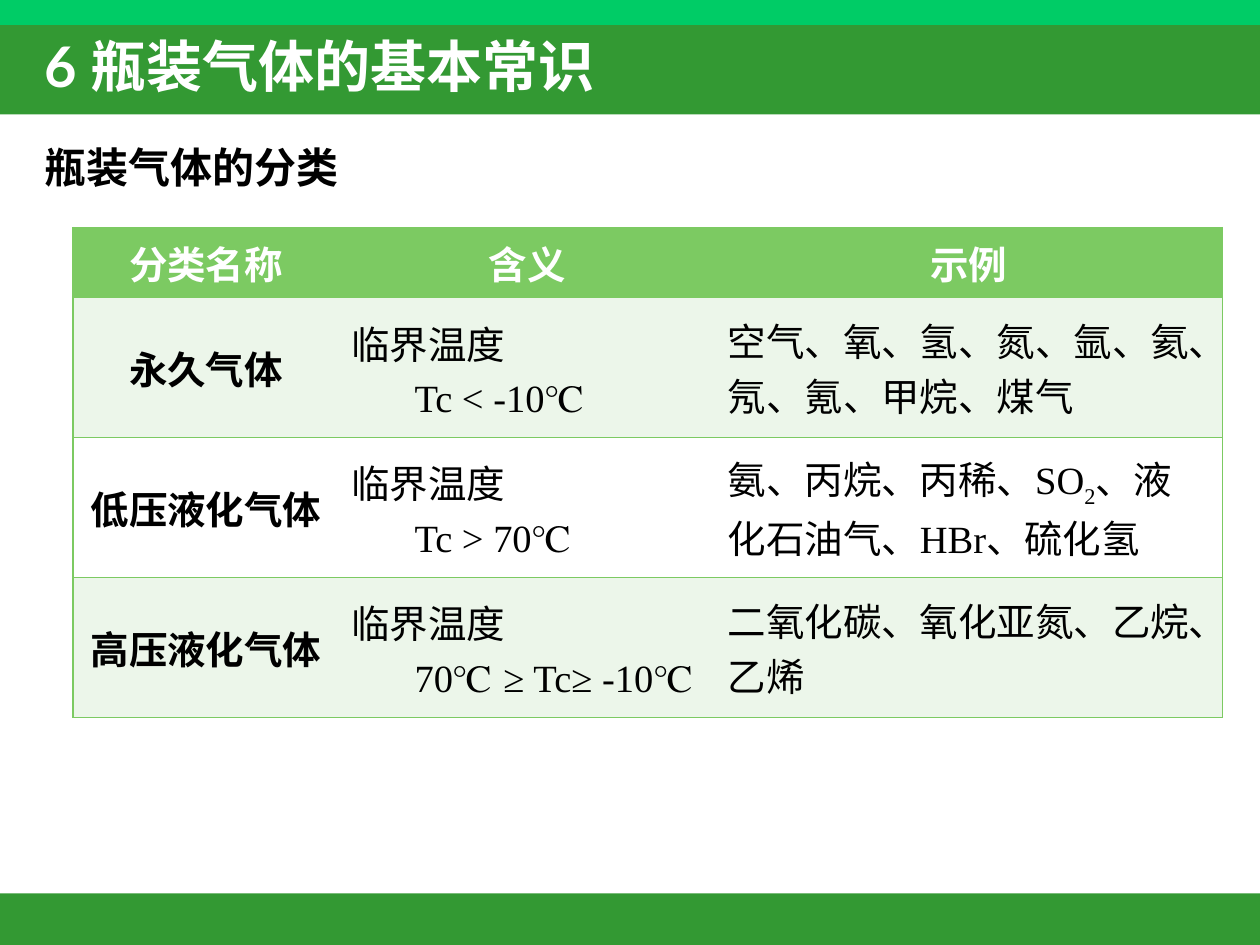
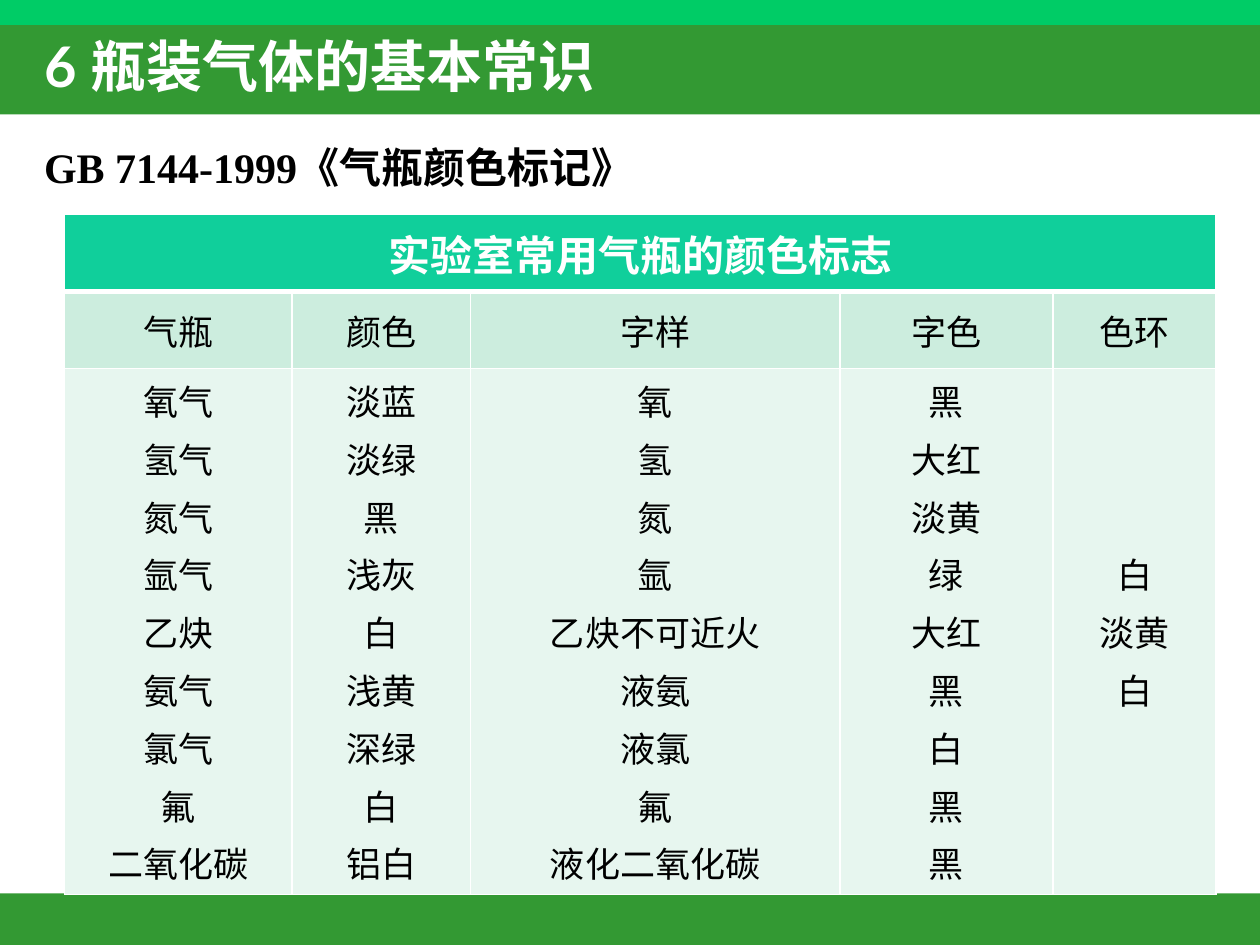
from lxml import etree
from pptx import Presentation
from pptx.dml.color import RGBColor
from pptx.enum.shapes import MSO_SHAPE
from pptx.enum.text import MSO_ANCHOR, PP_ALIGN
from pptx.oxml.ns import qn
from pptx.util import Pt

RECT = MSO_SHAPE.RECTANGLE
MIDDLE, TOP = MSO_ANCHOR.MIDDLE, MSO_ANCHOR.TOP
LEFT, CENTER = PP_ALIGN.LEFT, PP_ALIGN.CENTER

WIDE, TALL = 720, 540
SERIF, SANS = "Times New Roman", "Lato"
BLACK, WHITE = "000000", "FFFFFF"
GREEN, MINT = "339933", "00CC66"
LIME, PALE = "7CCA62", "ECF6EA"
TEAL, SOFT, FAINT = "10CF9B", "CCEDDE", "E7F6EF"

BANDS = [(0, 14.4, MINT), (14.4, 51, GREEN), (510.5, 29.5, GREEN)]
TITLE = "6 瓶装气体的基本常识"

KINDS = {
    "head": "瓶装气体的分类",
    "body": 49,
    "spot": (41.7, 130),
    "cols": [152, 215, 290],
    "rows": [40, 80, 80, 80],
    "cells": [
        [["分类名称"], ["含义"], ["示例"]],
        [["永久气体"], ["临界温度", "Tc < -10℃"],
         ["空气、氧、氢、氮、氩、氦、氖、氪、甲烷、煤气"]],
        [["低压液化气体"], ["临界温度", "Tc > 70℃"],
         ["氨、丙烷、丙稀、SO|2|、液化石油气、HBr、硫化氢"]],
        [["高压液化气体"], ["临界温度", "70℃ ≥ Tc≥ -10℃"],
         ["二氧化碳、氧化亚氮、乙烷、乙烯"]],
    ],
}

MARKS = {
    "head": "GB 7144-1999《气瓶颜色标记》",
    "body": 420,
    "spot": (36.9, 122.6),
    "cols": [130, 102, 211, 122, 93],
    "rows": [44, 44, 300],
    "cells": [
        [["实验室常用气瓶的颜色标志"]],
        [["气瓶"], ["颜色"], ["字样"], ["字色"], ["色环"]],
        [["氧气", "氢气", "氮气", "氩气", "乙炔", "氨气", "氯气", "氟", "二氧化碳"],
         ["淡蓝", "淡绿", "黑", "浅灰", "白", "浅黄", "深绿", "白", "铝白"],
         ["氧", "氢", "氮", "氩", "乙炔不可近火", "液氨", "液氯", "氟", "液化二氧化碳"],
         ["黑", "大红", "淡黄", "绿", "大红", "黑", "白", "黑", "黑"],
         ["白", "淡黄", "白"]],
    ],
}


def paint(item, tone):
    item.fill.solid()
    item.fill.fore_color.rgb = RGBColor.from_string(tone)


def write(para, text, size, tone, bold, font=SERIF):
    for at, part in enumerate(text.split("|")):
        run = para.add_run()
        run.text = part
        run.font.name = font
        run.font.size = Pt(size)
        run.font.bold = bold
        run.font.color.rgb = RGBColor.from_string(tone)
        if at % 2:
            run.font._element.set("baseline", "-25000")


def edge(cell, side, tone, width=1):
    line = etree.SubElement(cell._tc.get_or_add_tcPr(), qn(f"a:ln{side}"))
    line.set("w", str(Pt(width)))
    if tone:
        fill = etree.SubElement(line, qn("a:solidFill"))
        etree.SubElement(fill, qn("a:srgbClr")).set("val", tone)
    else:
        etree.SubElement(line, qn("a:noFill"))


def fill_cell(cell, lines, size, tone, bold, align, step=0):
    cell.vertical_anchor = MIDDLE
    for at, text in enumerate(lines):
        frame = cell.text_frame
        para = frame.add_paragraph() if at else frame.paragraphs[0]
        para.alignment = align
        para.space_before = Pt(size * 0.2 if at else 0)
        if at and step:
            para.level = 1
            props = para._p.get_or_add_pPr()
            props.set("marL", str(Pt(step)))
            props.set("indent", "0")
        write(para, text, size, tone, bold)


def add_grid(slide, data):
    cols, rows = data["cols"], data["rows"]
    left, top = data["spot"]
    grid = slide.shapes.add_table(
        len(rows), len(cols), Pt(left), Pt(top), Pt(sum(cols)), Pt(sum(rows))).table
    grid.first_row = grid.horz_banding = False
    for col, width in zip(grid.columns, cols):
        col.width = Pt(width)
    for row, height in zip(grid.rows, rows):
        row.height = Pt(height)
    return grid


def draw_kinds(slide):
    grid = add_grid(slide, KINDS)
    last = len(KINDS["cols"]) - 1
    for r, row in enumerate(KINDS["cells"]):
        for c, lines in enumerate(row):
            cell = grid.cell(r, c)
            head = r == 0
            edge(cell, "L", LIME if c == 0 else None)
            edge(cell, "R", LIME if c == last else None)
            edge(cell, "T", LIME)
            edge(cell, "B", LIME)
            paint(cell, LIME if head else PALE if r % 2 else WHITE)
            name = head or c == 0
            fill_cell(cell, lines, 22, WHITE if head else BLACK, name,
                      CENTER if name else LEFT, 36)


def draw_marks(slide):
    grid = add_grid(slide, MARKS)
    tones = [TEAL, SOFT, FAINT]
    last = len(MARKS["cols"]) - 1
    for r, tone in enumerate(tones):
        for c in range(last + 1):
            cell = grid.cell(r, c)
            for side in "LRTB":
                thick = (r, side) in [(0, "B"), (1, "T")]
                edge(cell, side, WHITE, 3 if thick else 1)
            paint(cell, tone)
    grid.cell(0, 0).merge(grid.cell(0, last))
    for r, row in enumerate(MARKS["cells"]):
        head = r == 0
        for c, lines in enumerate(row):
            fill_cell(grid.cell(r, c), lines, 24 if head else 20,
                      WHITE if head else BLACK, head, CENTER)


def add_bands(slide, layout):
    for at, (top, height, tone) in enumerate(BANDS):
        band = slide.shapes.add_shape(RECT, 0, Pt(top), Pt(WIDE), Pt(height))
        band.shadow.inherit = False
        band.line.fill.background()
        paint(band, tone)
        layout.shapes._spTree.insert(2 + at, band._element)


def place(hold, top, height, anchor):
    hold.left, hold.top = Pt(18), Pt(top)
    hold.width, hold.height = Pt(681), Pt(height)
    hold.text_frame.vertical_anchor = anchor
    para = hold.text_frame.paragraphs[0]
    para.alignment = LEFT
    para.space_before = Pt(0)
    return para


def add_page(deck, layout, data):
    slide = deck.slides.add_slide(layout)
    write(place(slide.shapes.title, 8.6, 57.6, MIDDLE), TITLE, 32, WHITE, True, SANS)
    para = place(slide.placeholders[1], 77, data["body"], TOP)
    props = para._p.get_or_add_pPr()
    props.set("marL", "0")
    props.set("indent", "0")
    etree.SubElement(props, qn("a:buNone"))
    write(para, data["head"], 24, BLACK, True)
    return slide


def main():
    deck = Presentation()
    deck.slide_width, deck.slide_height = Pt(WIDE), Pt(TALL)
    layout = deck.slide_layouts[1]
    first = add_page(deck, layout, KINDS)
    add_bands(first, layout)
    draw_kinds(first)
    draw_marks(add_page(deck, layout, MARKS))
    deck.save("out.pptx")


if __name__ == "__main__":
    main()
